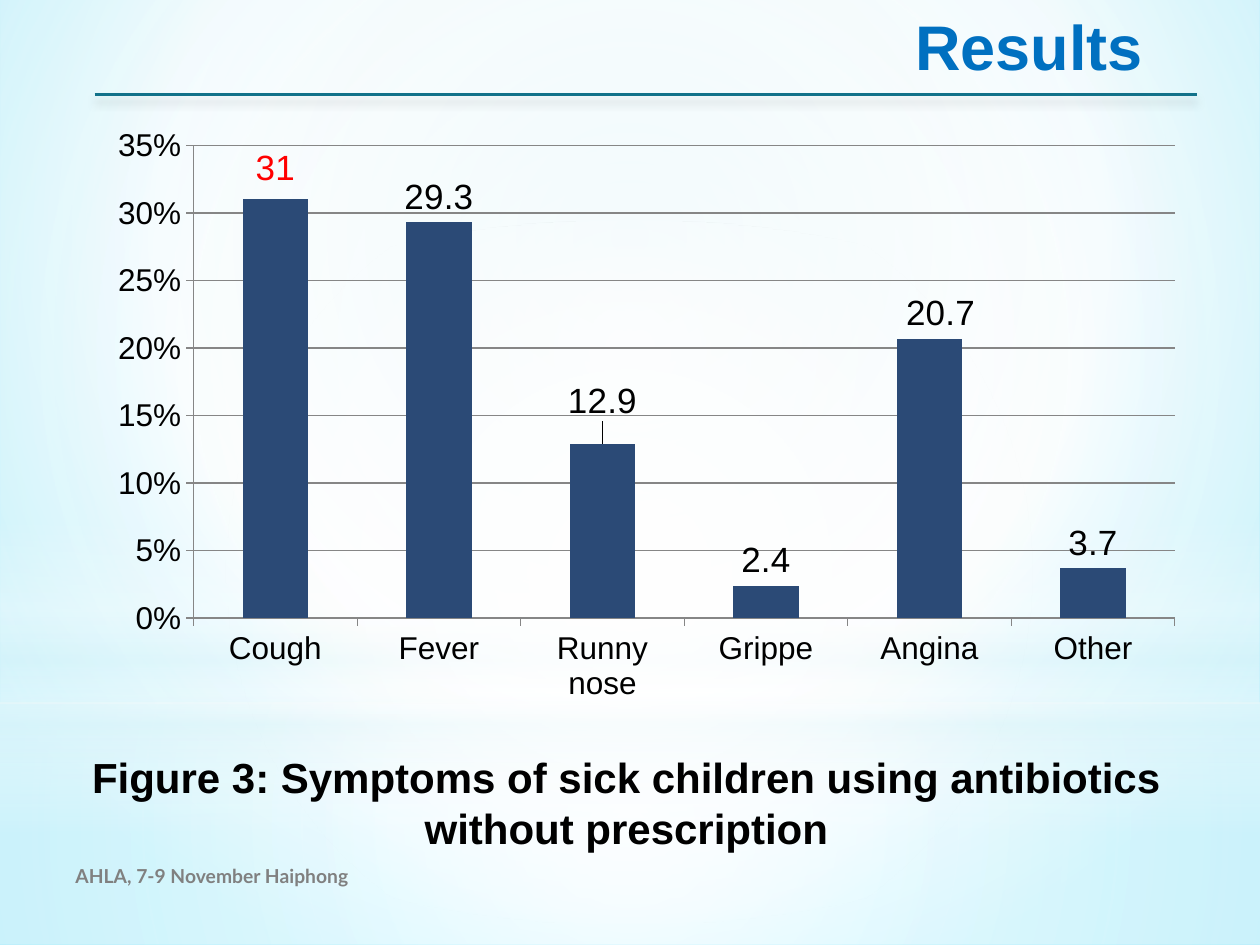
from lxml import etree
from pptx import Presentation
from pptx.chart.data import CategoryChartData
from pptx.dml.color import RGBColor
from pptx.enum.chart import XL_CHART_TYPE, XL_LABEL_POSITION, XL_TICK_MARK
from pptx.enum.shapes import MSO_CONNECTOR, MSO_SHAPE
from pptx.enum.text import MSO_ANCHOR, PP_ALIGN
from pptx.oxml import parse_xml
from pptx.oxml.ns import nsdecls, qn
from pptx.util import Pt

RECT, OVAL = MSO_SHAPE.RECTANGLE, MSO_SHAPE.OVAL
LEFT, CENTER = PP_ALIGN.LEFT, PP_ALIGN.CENTER
TOP, MIDDLE = MSO_ANCHOR.TOP, MSO_ANCHOR.MIDDLE
OUTSIDE_END = XL_LABEL_POSITION.OUTSIDE_END

BLACK = RGBColor(0, 0, 0)
RED = RGBColor(0xFF, 0, 0)
GRAY = RGBColor(0x80, 0x80, 0x80)
GRID = RGBColor(0x86, 0x86, 0x86)
BLUE = RGBColor(0x00, 0x70, 0xC0)
TEAL = RGBColor(0x12, 0x72, 0x8A)
NAVY = RGBColor(0x2B, 0x4A, 0x76)
WHITE = RGBColor(0xFF, 0xFF, 0xFF)
PALE = RGBColor(0xDE, 0xF5, 0xFA)
SKY = RGBColor(0xCD, 0xEF, 0xF7)
CYAN = RGBColor(0x7C, 0xE7, 0xFF)


def set_gradient(fill, root, stops, focus=None):
    """Stops are (position, colour, opacity) in percent; no focus means top to bottom."""
    fill.gradient()
    grad = next(root.iter(qn("a:gradFill")))
    for child in list(grad):
        grad.remove(child)
    gs_list = etree.SubElement(grad, qn("a:gsLst"))
    for pos, color, opacity in stops:
        gs = etree.SubElement(gs_list, qn("a:gs"), pos=str(pos * 1000))
        clr = etree.SubElement(gs, qn("a:srgbClr"), val=str(color))
        if opacity < 100:
            etree.SubElement(clr, qn("a:alpha"), val=str(opacity * 1000))
    if focus:
        path = etree.SubElement(grad, qn("a:path"), path="circle")
        sides = {side: str(v * 1000) for side, v in zip("ltrb", focus)}
        etree.SubElement(path, qn("a:fillToRect"), sides)
    else:
        etree.SubElement(grad, qn("a:lin"), ang="5400000", scaled="0")


def add_text(s, box, text, font, size, color, align=LEFT, anchor=TOP, wrap=True):
    tf = s.shapes.add_textbox(*map(Pt, box)).text_frame
    tf.word_wrap = wrap
    tf.vertical_anchor = anchor
    tf.text = text
    p = tf.paragraphs[0]
    p.alignment = align
    f = p.runs[0].font
    f.name, f.size, f.bold = font, Pt(size), True
    f.color.rgb = color


prs = Presentation()
prs.slide_width, prs.slide_height = Pt(720), Pt(540)
s = prs.slides.add_slide(prs.slide_layouts[6])

# Background with soft light overlays
set_gradient(s.background.fill, s.element,
             [(0, SKY, 100), (60, WHITE, 100), (100, CYAN, 100)], (20, 10, 20, 60))
MID = (50, 50, 50, 50)
overlays = [
    (RECT, 401.75, 138.25, [(0, WHITE, 91), (37, WHITE, 76), (100, PALE, 79)], MID),
    (RECT, 0, 401.75, [(0, WHITE, 89), (48, WHITE, 62), (100, PALE, 79)], MID),
    (RECT, 296.65, 180, [(0, WHITE, 0), (29, WHITE, 30), (45, PALE, 40),
                         (55, WHITE, 26), (65, PALE, 60), (100, WHITE, 0)], None),
    (OVAL, 126, 401.75, [(0, WHITE, 100), (56, WHITE, 0)], MID),
]
for kind, top, height, stops, focus in overlays:
    sp = s.shapes.add_shape(kind, 0, Pt(top), Pt(720), Pt(height))
    sp.shadow.inherit = False
    sp.line.fill.background()
    set_gradient(sp.fill, sp.element, stops, focus)

# Rule under the title, with a faint shadow
rule = s.shapes.add_connector(MSO_CONNECTOR.STRAIGHT, Pt(54), Pt(54), Pt(684), Pt(54))
rule.line.color.rgb = TEAL
rule.line.width = Pt(1.25)
rule.element.spPr.append(parse_xml(
    f'<a:effectLst {nsdecls("a")}><a:outerShdw blurRad="{Pt(5)}" dist="{Pt(4)}" '
    'dir="5400000" rotWithShape="0"><a:srgbClr val="000000"><a:alpha val="20000"/>'
    '</a:srgbClr></a:outerShdw></a:effectLst>'))

# Title and caption
add_text(s, (516, 1, 156, 51), "Results", "Arial", 36, BLUE, wrap=False)
add_text(s, (12, 426, 692, 65.5),
         "Figure 3: Symptoms of sick children using antibiotics without prescription",
         "Arial", 24, BLACK, CENTER)

# Symptom chart: category, share, label, label shift (fractions of the chart)
symptoms = [
    ("Cough", 0.31, "31", 0, -0.01),
    ("Fever", 0.293, "29.3", 0, 0),
    ("Runny nose", 0.129, "12.9", 0, -0.03),
    ("Grippe", 0.024, "2.4", 0, 0),
    ("Angina", 0.207, "20.7", 0.01, 0),
    ("Other", 0.037, "3.7", 0, 0),
]
data = CategoryChartData(number_format="0.00%")
data.categories = [row[0] for row in symptoms]
data.add_series("Series 1", [row[1] for row in symptoms])
chart = s.shapes.add_chart(XL_CHART_TYPE.COLUMN_CLUSTERED,
                           Pt(54), Pt(66), Pt(630), Pt(342), data).chart
chart.has_legend = False
chart.has_title = False
chart.font.name, chart.font.size = "Lato", Pt(10)
chart.font.color.rgb = BLACK

# Axes and gridlines
for axis in (chart.category_axis, chart.value_axis):
    axis.major_tick_mark = XL_TICK_MARK.OUTSIDE
    axis.minor_tick_mark = XL_TICK_MARK.NONE
    axis.format.line.color.rgb = GRID
    f = axis.tick_labels.font
    f.name, f.size = "Arial", Pt(18)
    f.color.rgb = BLACK
axis = chart.value_axis
axis.minimum_scale, axis.maximum_scale, axis.major_unit = 0, 0.35, 0.05
axis.tick_labels.number_format = "0%"
axis.tick_labels.number_format_is_linked = False
axis.has_major_gridlines = True
axis.major_gridlines.format.line.color.rgb = GRID

# Plot area inside the chart frame
plot_area = next(chart.element.iter(qn("c:plotArea")))
for old in plot_area.findall(qn("c:layout")):
    plot_area.remove(old)
plot_area.insert(0, parse_xml(
    f'<c:layout {nsdecls("c")}><c:manualLayout><c:layoutTarget val="inner"/>'
    '<c:xMode val="edge"/><c:yMode val="edge"/><c:x val="0.09"/><c:y val="0.05"/>'
    '<c:w val="0.89"/><c:h val="0.79"/></c:manualLayout></c:layout>'))

# Columns and their labels
plot = chart.plots[0]
plot.gap_width = 150
plot.vary_by_categories = False
series = plot.series[0]
series.format.fill.solid()
series.format.fill.fore_color.rgb = NAVY
for i, (_, _, text, dx, dy) in enumerate(symptoms):
    label = series.points[i].data_label
    label.text_frame.text = text
    label.position = OUTSIDE_END
    f = label.text_frame.paragraphs[0].runs[0].font
    f.name, f.size, f.bold = "Arial", Pt(20), False
    f.color.rgb = BLACK if i else RED
    if dx or dy:
        d_lbl = series.data_labels._element.findall(qn("c:dLbl"))[i]
        d_lbl.insert(1, parse_xml(
            f'<c:layout {nsdecls("c")}><c:manualLayout><c:x val="{dx}"/>'
            f'<c:y val="{dy}"/></c:manualLayout></c:layout>'))
labels = series.data_labels
labels.show_value = True
labels.number_format, labels.number_format_is_linked = "0.00%", False
labels.font.name, labels.font.size = "Arial", Pt(20)

# Footer
add_text(s, (36, 486, 264, 28.75), "AHLA, 7-9 November Haiphong", "Lato", 11, GRAY,
         anchor=MIDDLE)

prs.save("out.pptx")
